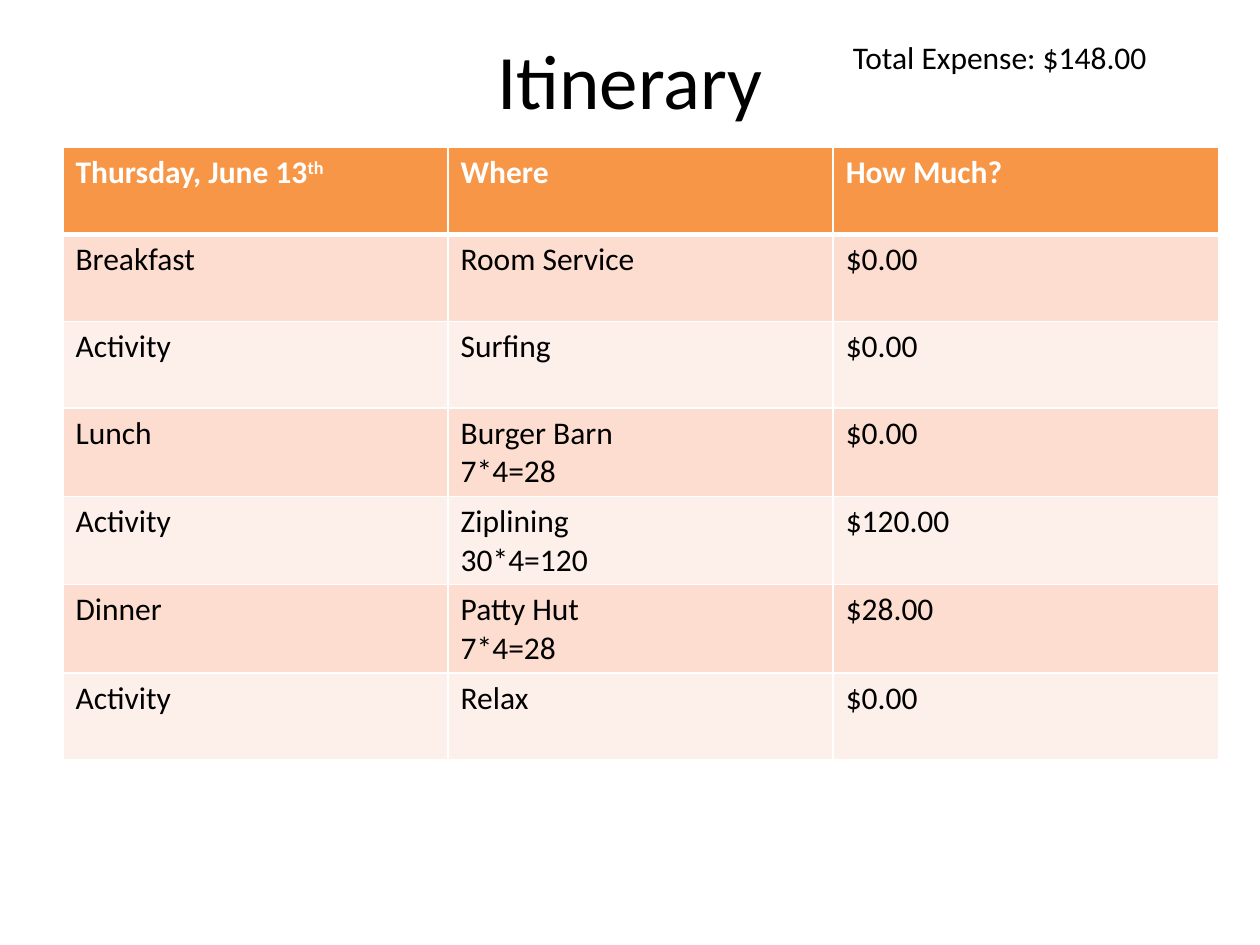
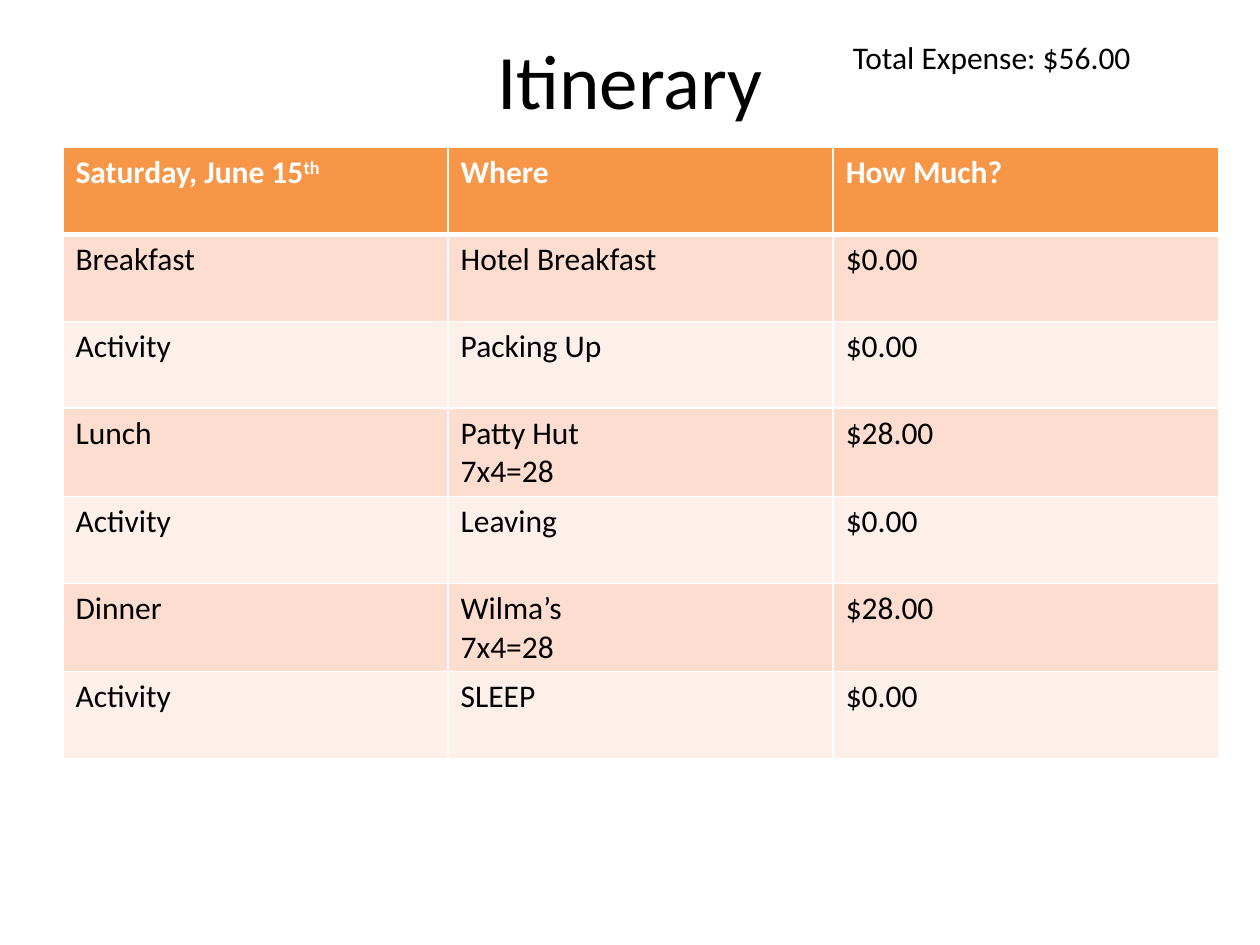
import pptx
import pptx.util
import pptx.dml.color
import pptx.enum.text
import pptx.oxml
import pptx.oxml.ns

Inches = pptx.util.Inches
ALIGN = pptx.enum.text.PP_ALIGN
ANCHOR = pptx.enum.text.MSO_ANCHOR

# Content: a list in a cell holds its lines
TITLE = "Itinerary"
HEADS = ["Where", "How Much?"]
SLOTS = ["Breakfast", "Activity", "Lunch", "Activity", "Dinner", "Activity"]
DAYS = [
    {
        "date": "Thursday, June 13",
        "total": "$148.00",
        "plans": [
            (["Room Service"], "$0.00"),
            (["Surfing"], "$0.00"),
            (["Burger Barn", "7*4=28"], "$0.00"),
            (["Ziplining", "30*4=120"], "$120.00"),
            (["Patty Hut", "7*4=28"], "$28.00"),
            (["Relax"], "$0.00"),
        ],
    },
    {
        "date": "Saturday, June 15",
        "total": "$56.00",
        "plans": [
            (["Hotel Breakfast"], "$0.00"),
            (["Packing Up"], "$0.00"),
            (["Patty Hut", "7x4=28"], "$28.00"),
            (["Leaving"], "$0.00"),
            (["Wilma’s", "7x4=28"], "$28.00"),
            (["SLEEP"], "$0.00"),
        ],
    },
]

# Shared style
FONT = "Calibri"
BLACK, WHITE = "000000", "FFFFFF"
ORANGE, PEACH, CREAM = "F79646", "FCDDCF", "FDEFE9"
LEFT, TOP, WIDTH, ROW = 0.5, 1.17, 9.17, 0.69
THIN, THICK = 1, 3


def rgb(code):
    return pptx.dml.color.RGBColor.from_string(code)


def write(frame, lines, size=18, color=BLACK, bold=False, align=ALIGN.LEFT,
          anchor=ANCHOR.TOP, sup=None):
    """Fill a text frame with lines; sup is raised after the last one."""
    frame.word_wrap = True
    frame.vertical_anchor = anchor
    for i, line in enumerate(lines):
        para = frame.paragraphs[0] if i == 0 else frame.add_paragraph()
        para.alignment = align
        parts = [line, sup] if sup and i == len(lines) - 1 else [line]
        for part in parts:
            run = para.add_run()
            run.text = part
            run.font.name = FONT
            run.font.size = pptx.util.Pt(size)
            run.font.bold = bold
            run.font.color.rgb = rgb(color)
            if part is sup:
                run.font._element.set("baseline", "30000")


def label(slide, box, text, **style):
    shape = slide.shapes.add_textbox(*map(Inches, box))
    write(shape.text_frame, [text], **style)


def edge(cell, side, width):
    """Draw one white border of a cell."""
    props = cell._tc.get_or_add_tcPr()
    props.append(pptx.oxml.parse_xml(
        f'<a:ln{side} {pptx.oxml.ns.nsdecls("a")} w="{pptx.util.Pt(width)}">'
        f'<a:solidFill><a:srgbClr val="{WHITE}"/></a:solidFill></a:ln{side}>'))


def plan(slide, day):
    """Place the table of one day."""
    rows = [([day["date"]], *[[head] for head in HEADS])]
    rows += [([slot], where, [cost])
             for slot, (where, cost) in zip(SLOTS, day["plans"])]
    cols = len(rows[0])
    table = slide.shapes.add_table(
        len(rows), cols, Inches(LEFT), Inches(TOP),
        Inches(WIDTH), Inches(ROW * len(rows))).table
    table.horz_banding = False
    for col in table.columns:
        col.width = Inches(WIDTH / cols)
    for r, row in enumerate(rows):
        table.rows[r].height = Inches(ROW)
        head = r == 0
        fill = ORANGE if head else PEACH if r % 2 else CREAM
        for c, lines in enumerate(row):
            cell = table.cell(r, c)
            edge(cell, "L", THIN)
            edge(cell, "R", THIN)
            edge(cell, "T", THICK if r == 1 else THIN)
            edge(cell, "B", THICK if head else THIN)
            cell.fill.solid()
            cell.fill.fore_color.rgb = rgb(fill)
            write(cell.text_frame, lines, bold=head,
                  color=WHITE if head else BLACK,
                  sup="th" if head and c == 0 else None)


def main():
    deck = pptx.Presentation()
    deck.slide_width, deck.slide_height = Inches(10), Inches(7.5)
    for day in DAYS:
        slide = deck.slides.add_slide(deck.slide_layouts[6])
        label(slide, (0.5, 0, 9, 1.25), TITLE, size=44,
              align=ALIGN.CENTER, anchor=ANCHOR.MIDDLE)
        label(slide, (6.67, 0.25, 3.08, 0.4), "Total Expense: " + day["total"])
        plan(slide, day)
    deck.save("out.pptx")


if __name__ == "__main__":
    main()
